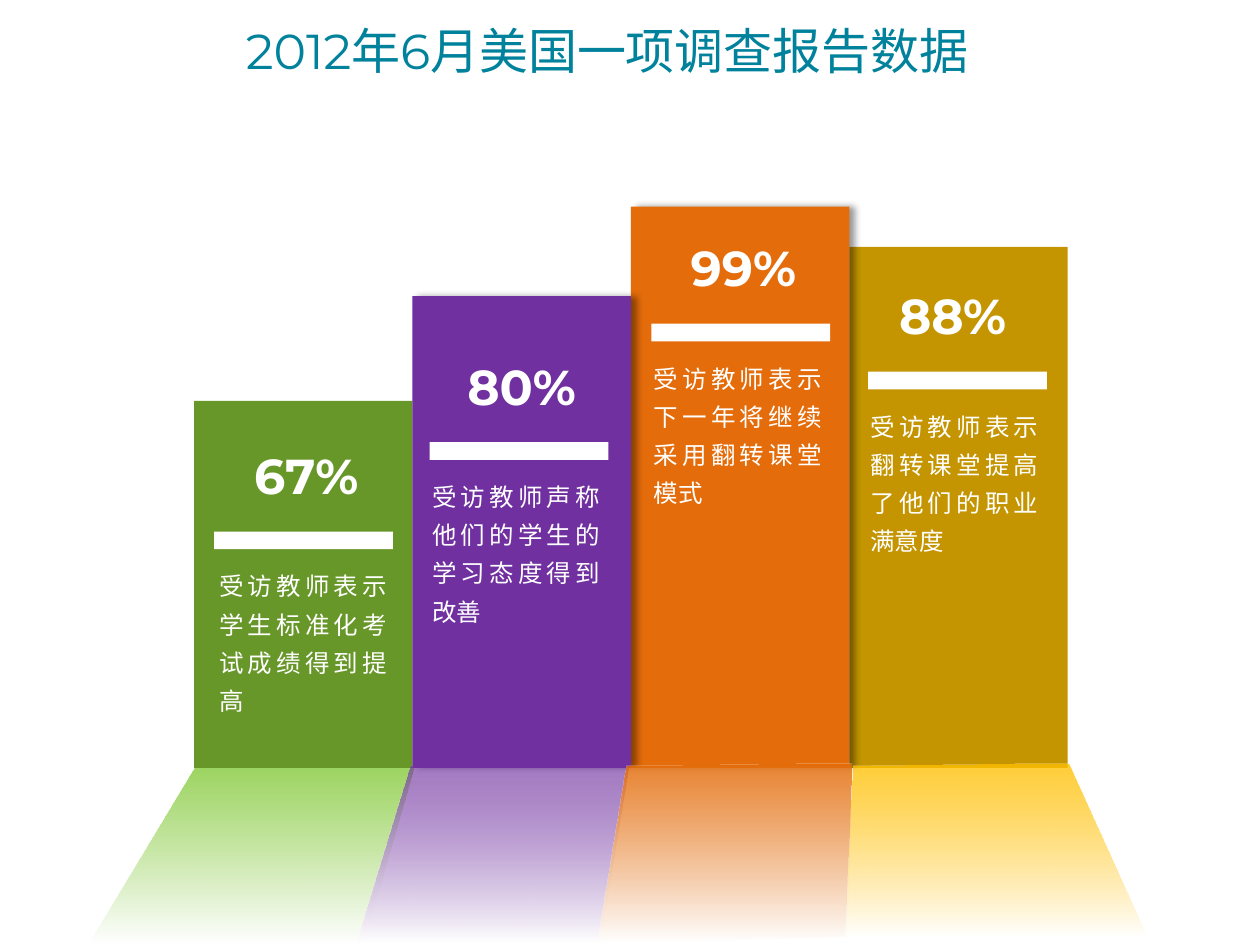
"""Build a slide of four survey bars standing on fading floor panels."""
from lxml import etree
from pptx import Presentation
from pptx import util as u
from pptx.dml import color
from pptx.enum import shapes, text
from pptx.oxml import ns

LATIN, HAN = "Montserrat", "Noto Sans CJK SC"
BAR_LEFT, BAR_WIDTH, BAR_BOTTOM = 110.9, 124.8, 438.8

BARS = [
    dict(fill="689729", top=229, share="67%", share_left=124.6, rule=(122.4, 303.8),
         note_left=118.1, note="受访教师表示学生标准化考试成绩得到提高"),
    dict(fill="7030A0", top=169.2, share="80%", share_left=247.7, rule=(245.5, 252.7),
         note_left=239.8, note="受访教师声称他们的学生的学习态度得到改善"),
    dict(fill="E46C0A", top=118.1, share="99%", share_left=374.4, rule=(372.2, 185),
         note_left=366.5, note="受访教师表示下一年将继续采用翻转课堂模式"),
    dict(fill="C49500", top=141.1, share="88%", share_left=493.9, rule=(496.1, 212.4),
         note_left=490.3, note="受访教师表示翻转课堂提高了他们的职业满意度"),
]
BAR_ORDER = [(3, False), (0, False), (2, True), (1, True)]

FLOORS = [
    ("92D050", 89, [(110.9, 439.2), (236.2, 439.2), (207.4, 539.3), (50.4, 539.3)]),
    ("7030A0", 64, [(234.7, 437.8), (359.3, 437.8), (342.7, 538.6), (203.8, 538.6)]),
    ("E46C0A", 83, [(357.8, 437.8), (486.7, 436.3), (483.8, 535), (341.3, 538.6)]),
    ("FFC000", 78, [(487.4, 437.8), (610.6, 436.3), (655.9, 535.7), (483.1, 535.7)]),
]


def rgb(value):
    return color.RGBColor.from_string(value)


def apply(target, values):
    for name, value in values.items():
        setattr(target, name, value)


def add_xml(parent, tag, **attributes):
    return etree.SubElement(parent, ns.qn(tag), attributes)


class Painter:
    """Hold the text styles and the current page."""

    styles = {
        "title": dict(font=dict(size=u.Pt(28), name=LATIN, bold=False), color="00829C",
                      para=dict(alignment=text.PP_ALIGN.CENTER)),
        "share": dict(font=dict(size=u.Pt(28), name=LATIN, bold=True), color="FFFFFF",
                      para=dict(alignment=text.PP_ALIGN.CENTER, line_spacing=1.3)),
        "note": dict(font=dict(size=u.Pt(14), name=HAN, bold=False), color="FFFFFF",
                     para=dict(alignment=text.PP_ALIGN.JUSTIFY, line_spacing=1.3)),
    }

    def __init__(self, page):
        self.page = page

    def fill_text(self, frame, words, style):
        look = self.styles[style]
        para = frame.paragraphs[0]
        apply(para, look["para"])
        span = para.add_run()
        span.text = words
        apply(span.font, look["font"])
        span.font.color.rgb = rgb(look["color"])
        add_xml(span._r.get_or_add_rPr(), "a:ea", typeface=HAN)

    def title(self, words, left, top, width, height):
        box = self.page.shapes.title
        apply(box, dict(left=u.Pt(left), top=u.Pt(top), width=u.Pt(width), height=u.Pt(height)))
        apply(box.text_frame, dict(vertical_anchor=text.MSO_ANCHOR.MIDDLE, word_wrap=True,
                                   auto_size=text.MSO_AUTO_SIZE.NONE))
        self.fill_text(box.text_frame, words, "title")

    def label(self, words, style, *place):
        box = self.page.shapes.add_textbox(*map(u.Pt, place))
        apply(box.text_frame, dict(word_wrap=True,
                                   auto_size=text.MSO_AUTO_SIZE.SHAPE_TO_FIT_TEXT))
        self.fill_text(box.text_frame, words, style)

    def block(self, fill, *place, shadow=False):
        box = self.page.shapes.add_shape(shapes.MSO_SHAPE.RECTANGLE, *map(u.Pt, place))
        box.shadow.inherit = False
        box.fill.solid()
        box.fill.fore_color.rgb = rgb(fill)
        box.line.fill.background()
        if shadow:
            effects = box._element.spPr.find(ns.qn("a:effectLst"))
            outer = add_xml(effects, "a:outerShdw", blurRad=str(u.Pt(4)), dist=str(u.Pt(3)),
                            dir="0", algn="l", rotWithShape="0")
            shade = add_xml(outer, "a:srgbClr", val="000000")
            add_xml(shade, "a:alpha", val="40000")

    def floor(self, fill, opacity, corners):
        points = [(u.Pt(x), u.Pt(y)) for x, y in corners]
        builder = self.page.shapes.build_freeform(*points[0])
        builder.add_line_segments(points[1:], close=True)
        panel = builder.convert_to_shape()
        panel.shadow.inherit = False
        panel.line.fill.background()
        panel.fill.gradient()
        panel.fill.gradient_angle = 270
        for stop, position, value in zip(panel.fill.gradient_stops, (0, 1), (fill, "FFFFFF")):
            stop.position = position
            stop.color.rgb = rgb(value)
        first = next(panel._element.spPr.iter(ns.qn("a:srgbClr")))
        add_xml(first, "a:alpha", val=str(opacity * 1000))


def main():
    deck = Presentation()
    apply(deck, dict(slide_width=u.Pt(720), slide_height=u.Pt(540)))
    painter = Painter(deck.slides.add_slide(deck.slide_layouts[5]))
    painter.title("2012年6月美国一项调查报告数据", 61.9, 7.9, 570.2, 41)
    for index, shadow in BAR_ORDER:
        bar = BARS[index]
        painter.block(bar["fill"], BAR_LEFT + index * BAR_WIDTH, bar["top"],
                      BAR_WIDTH, BAR_BOTTOM - bar["top"], shadow=shadow)
    for floor in FLOORS:
        painter.floor(*floor)
    for bar in BARS:
        left, top = bar["rule"]
        painter.label(bar["share"], "share", bar["share_left"], top - 62.6, 100.8, 47.5)
        painter.label(bar["note"], "note", bar["note_left"], top + 14.2, 110.2, 95)
        painter.block("FFFFFF", left, top, 102.2, 10.1)
    deck.save("out.pptx")


if __name__ == "__main__":
    main()
